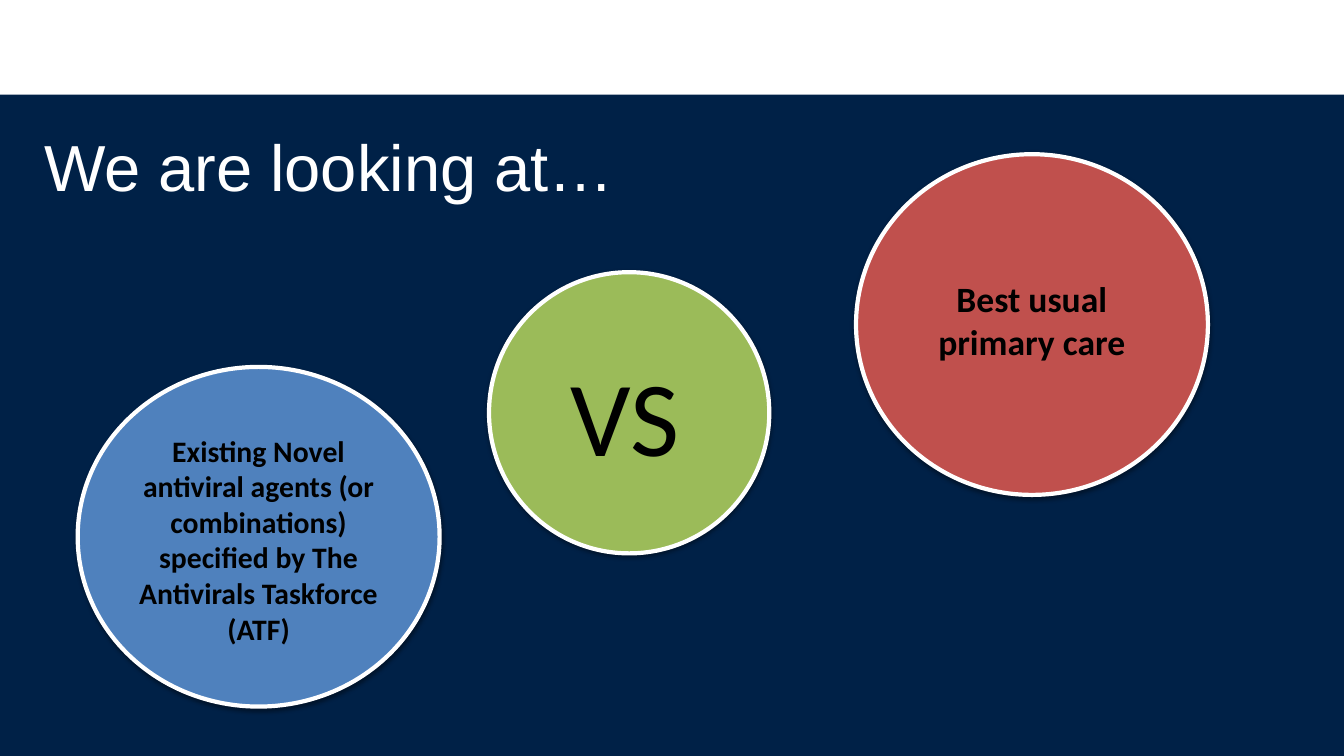
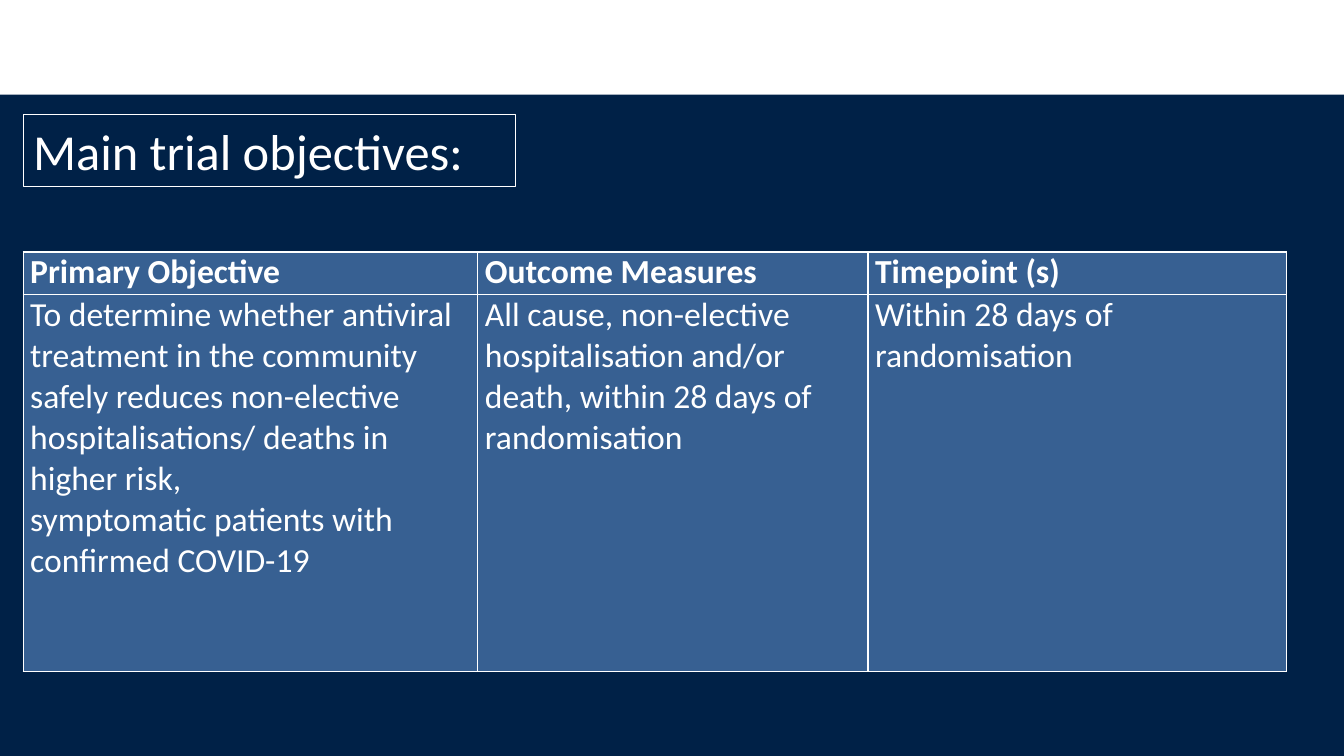
import pptx
import pptx.dml.color
import pptx.enum.shapes
import pptx.enum.text
import pptx.oxml
import pptx.oxml.ns
import pptx.util

Inches = pptx.util.Inches
Pt = pptx.util.Pt
SHAPE = pptx.enum.shapes.MSO_SHAPE
ALIGN = pptx.enum.text.PP_ALIGN
NS = 'xmlns:a="http://schemas.openxmlformats.org/drawingml/2006/main"'
NAVY, WHITE, BLACK = "002147", "FFFFFF", "000000"
BLUE, RED, GREEN, STEEL = "4F81BD", "C0504D", "9BBB59", "376092"


def tint(code):
    return pptx.dml.color.RGBColor.from_string(code)


class Deck:
    """Holds the deck style and the slide being built."""

    def __init__(self):
        self.show = pptx.Presentation()
        self.show.slide_width = Inches(13.33)
        self.show.slide_height = Inches(7.5)
        self.slide = None

    def page(self):
        self.slide = self.show.slides.add_slide(self.show.slide_layouts[6])
        band = self.shape(SHAPE.RECTANGLE, (0, 0.94, 13.33, 6.56), NAVY)
        self.shade(band, 0, 1.8, 35)

    def shape(self, kind, area, fill=None, width=0):
        shape = self.slide.shapes.add_shape(kind, *map(Inches, area))
        shape.shadow.inherit = False
        if fill:
            shape.fill.solid()
            shape.fill.fore_color.rgb = tint(fill)
        else:
            shape.fill.background()
        if width:
            shape.line.color.rgb = tint(WHITE)
            shape.line.width = Pt(width)
        else:
            shape.line.fill.background()
        return shape

    def shade(self, shape, blur, drop, alpha):
        effect = shape.element.spPr.find(pptx.oxml.ns.qn("a:effectLst"))
        effect.append(pptx.oxml.parse_xml(
            f'<a:outerShdw {NS} blurRad="{Pt(blur)}" dist="{Pt(drop)}" dir="5400000" '
            f'rotWithShape="0"><a:srgbClr val="{BLACK}">'
            f'<a:alpha val="{alpha * 1000}"/></a:srgbClr></a:outerShdw>'))

    def disc(self, area, fill):
        self.shade(self.shape(SHAPE.OVAL, area, fill, 3), 3.1, 1.6, 38)

    def letter(self, frame, text, size, color, font="Calibri", bold=False, align=ALIGN.LEFT):
        frame.word_wrap = True
        frame.vertical_anchor = pptx.enum.text.MSO_ANCHOR.TOP
        frame.text = text
        for line in frame.paragraphs:
            line.alignment = align
            line.font.name = font
            line.font.size = Pt(size)
            line.font.bold = bold
            line.font.color.rgb = tint(color)

    def label(self, area, text, size, color=BLACK, **style):
        box = self.slide.shapes.add_textbox(*map(Inches, area))
        self.letter(box.text_frame, text, size, color, **style)

    def frame(self, area, text, size):
        box = self.shape(SHAPE.RECTANGLE, area, width=0.75)
        self.letter(box.text_frame, text, size, WHITE)

    def edge(self, cell):
        props = cell._tc.get_or_add_tcPr()
        for spot, side in enumerate(("lnL", "lnR", "lnT", "lnB")):
            props.insert(spot, pptx.oxml.parse_xml(
                f'<a:{side} {NS} w="{Pt(1)}"><a:solidFill>'
                f'<a:srgbClr val="{WHITE}"/></a:solidFill></a:{side}>'))

    def table(self, area, widths, heights, rows):
        grid = self.slide.shapes.add_table(len(rows), len(widths), *map(Inches, area)).table
        for column, width in zip(grid.columns, widths):
            column.width = Inches(width)
        for row, height in zip(grid.rows, heights):
            row.height = Inches(height)
        for r, texts in enumerate(rows):
            for c, text in enumerate(texts):
                cell = grid.cell(r, c)
                cell.margin_left = cell.margin_right = Inches(0.07)
                cell.margin_top = cell.margin_bottom = 0
                cell.fill.solid()
                cell.fill.fore_color.rgb = tint(STEEL)
                self.letter(cell.text_frame, text, 24, WHITE, bold=r == 0,
                            align=ALIGN.LEFT if r else ALIGN.JUSTIFY)
                self.edge(cell)


def main():
    deck = Deck()

    deck.page()
    deck.label((0.34, 1.21, 8.86, 0.88), "We are looking at…", 46.5, WHITE, font="Arial")
    deck.disc((0.77, 3.64, 3.59, 3.37), BLUE)
    deck.label((1.08, 4.24, 2.97, 2.24),
               "Existing Novel antiviral agents (or combinations) specified by "
               "The Antivirals Taskforce (ATF)", 21.2, bold=True, align=ALIGN.CENTER)
    deck.disc((8.49, 1.53, 3.49, 3.38), RED)
    deck.label((9.15, 2.7, 2.17, 0.96), "Best usual primary care", 25.4,
               bold=True, align=ALIGN.CENTER)
    deck.disc((4.85, 2.7, 2.78, 2.79), GREEN)
    deck.label((5.56, 3.42, 1.62, 1.39), "VS", 76.2)

    deck.page()
    deck.frame((0.23, 1.14, 4.88, 0.71), "Main trial objectives:", 36)
    deck.table((0.23, 2.5, 12.53, 4.16), (4.51, 3.87, 4.15), (0.42, 3.74), (
        ("Primary Objective", "Outcome Measures", "Timepoint (s)"),
        ("To determine whether antiviral treatment in the community safely reduces "
         "non-elective hospitalisations/ deaths in higher risk,\n"
         "symptomatic patients with confirmed COVID-19",
         "All cause, non-elective hospitalisation and/or death, within 28 days of randomisation",
         "Within 28 days of randomisation")))

    deck.show.save("out.pptx")


if __name__ == "__main__":
    main()
